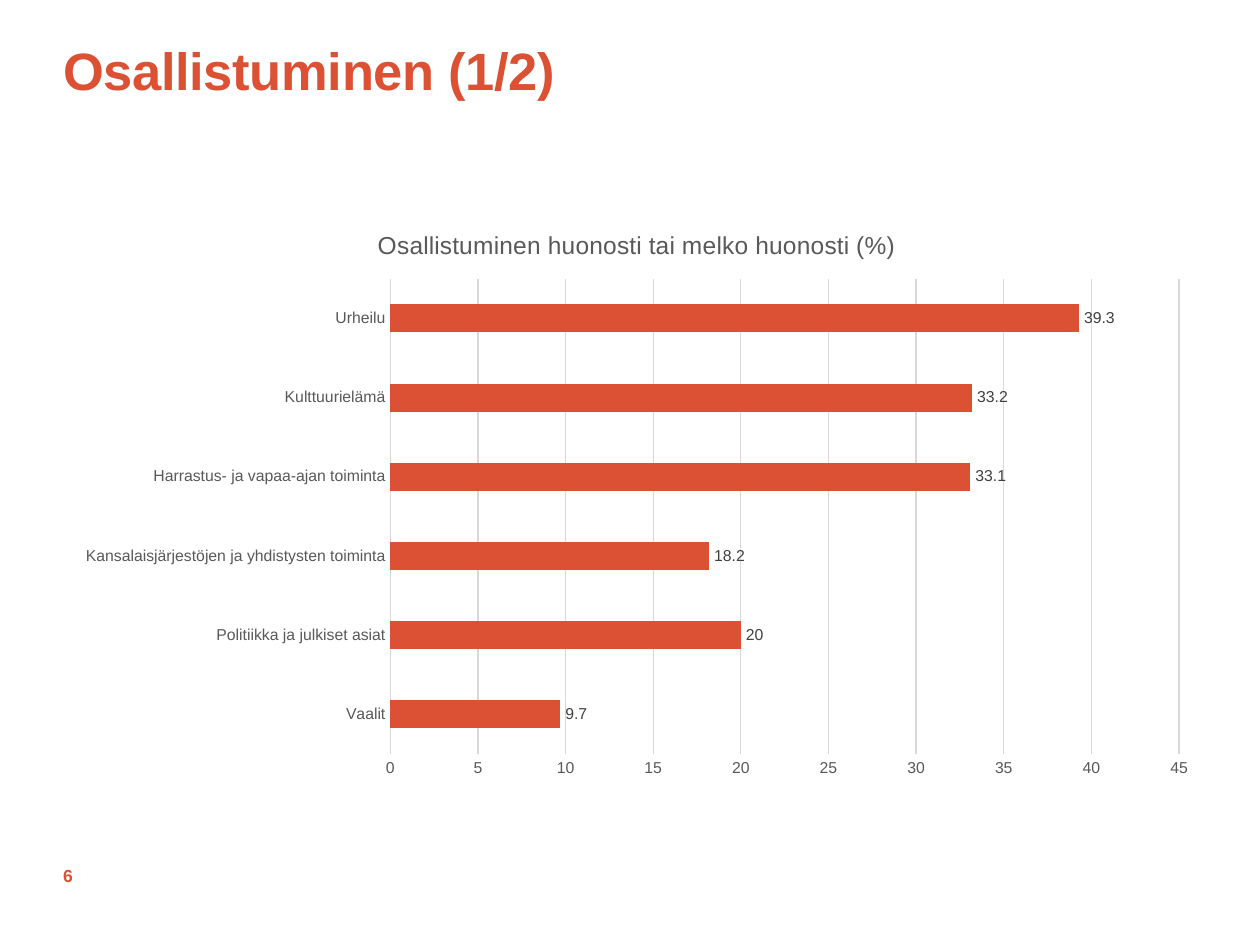
from pptx import Presentation
from pptx.chart.data import CategoryChartData
from pptx.dml.color import RGBColor
from pptx.enum.chart import XL_CHART_TYPE, XL_LABEL_POSITION, XL_TICK_MARK
from pptx.enum.text import MSO_ANCHOR, PP_ALIGN
from pptx.util import Inches, Pt

ORANGE = RGBColor(0xDC, 0x50, 0x34)
BLACK = RGBColor(0x00, 0x00, 0x00)
GREY = RGBColor(0x59, 0x59, 0x59)
LABEL_GREY = RGBColor(0x40, 0x40, 0x40)
LINE_GREY = RGBColor(0xD9, 0xD9, 0xD9)

BAR_CLUSTERED = XL_CHART_TYPE.BAR_CLUSTERED
OUTSIDE_END = XL_LABEL_POSITION.OUTSIDE_END
NO_TICK = XL_TICK_MARK.NONE
TOP, MIDDLE = MSO_ANCHOR.TOP, MSO_ANCHOR.MIDDLE
LEFT = PP_ALIGN.LEFT

FONT = "Arial"
TITLE_ONLY = 5

# Listed from the bottom bar to the top bar
POOR_PARTICIPATION = {
    "Vaalit": 9.7,
    "Politiikka ja julkiset asiat": 20,
    "Kansalaisjärjestöjen ja yhdistysten toiminta": 18.2,
    "Harrastus- ja vapaa-ajan toiminta": 33.1,
    "Kulttuurielämä": 33.2,
    "Urheilu": 39.3,
}


def style_font(font, size, color, bold=False):
    font.name = FONT
    font.size = Pt(size)
    font.bold = bold
    font.color.rgb = color


def write_text(frame, text, size, color, bold=False, anchor=TOP, spacing=None):
    frame.word_wrap = True
    frame.vertical_anchor = anchor
    frame.margin_left = frame.margin_right = 0
    frame.margin_top = frame.margin_bottom = 0
    paragraph = frame.paragraphs[0]
    paragraph.alignment = LEFT
    run = paragraph.add_run()
    run.text = text
    style_font(run.font, size, color, bold)
    if spacing is not None:
        run.font._element.set("spc", str(round(spacing * 100)))


def add_title(slide, text):
    title = slide.shapes.title
    title.left, title.top = Inches(0.5), Inches(0.3)
    title.width, title.height = Inches(9), Inches(1.16)
    write_text(title.text_frame, text, size=30, color=ORANGE, bold=True,
               spacing=-0.2)


def add_page_number(slide, number):
    box = slide.shapes.add_textbox(Inches(0.5), Inches(6.75),
                                   Inches(0.71), Inches(0.4))
    write_text(box.text_frame, number, size=10, color=ORANGE, bold=True,
               anchor=MIDDLE)


def style_axis(axis):
    axis.major_tick_mark = axis.minor_tick_mark = NO_TICK
    style_font(axis.tick_labels.font, 9, GREY)


def style_line(line):
    line.color.rgb = LINE_GREY
    line.width = Pt(0.75)


def add_bar_chart(slide, heading, values):
    data = CategoryChartData()
    data.categories = list(values)
    data.add_series("Series 1", list(values.values()))
    chart = slide.shapes.add_chart(BAR_CLUSTERED, Inches(0.5), Inches(1.64),
                                   Inches(9.11), Inches(4.62), data).chart
    style_font(chart.font, 10, BLACK)
    chart.has_legend = False

    # Heading
    chart.has_title = True
    chart.chart_title.include_in_layout = False
    heading_run = chart.chart_title.text_frame.paragraphs[0].add_run()
    heading_run.text = heading
    style_font(heading_run.font, 14, GREY)

    # Axes and gridlines
    categories, percentages = chart.category_axis, chart.value_axis
    style_axis(categories)
    style_line(categories.format.line)
    style_axis(percentages)
    percentages.minimum_scale, percentages.maximum_scale = 0, 45
    percentages.major_unit = 5
    percentages.format.line.fill.background()
    percentages.has_major_gridlines = True
    style_line(percentages.major_gridlines.format.line)

    # Bars and their values
    plot = chart.plots[0]
    plot.gap_width = 182
    plot.vary_by_categories = False
    bars = plot.series[0]
    bars.invert_if_negative = False
    bars.format.fill.solid()
    bars.format.fill.fore_color.rgb = ORANGE
    labels = bars.data_labels
    labels.show_value = True
    labels.position = OUTSIDE_END
    style_font(labels.font, 9, LABEL_GREY)


def main():
    deck = Presentation()
    deck.slide_width, deck.slide_height = Inches(10), Inches(7.5)
    slide = deck.slides.add_slide(deck.slide_layouts[TITLE_ONLY])
    add_title(slide, "Osallistuminen (1/2)")
    add_page_number(slide, "6")
    add_bar_chart(slide, "Osallistuminen huonosti tai melko huonosti (%)",
                  POOR_PARTICIPATION)
    deck.save("out.pptx")


if __name__ == "__main__":
    main()
